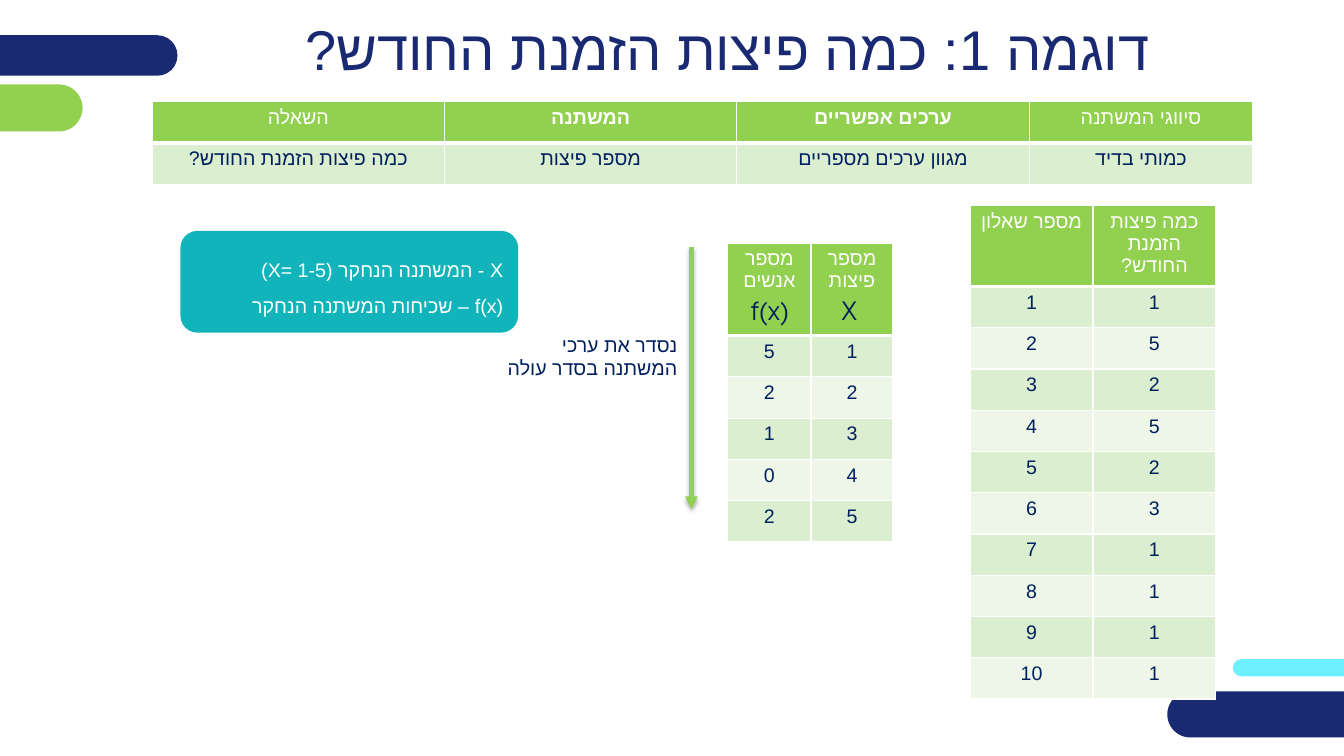
import pptx
import pptx.dml.color
import pptx.enum.shapes
import pptx.enum.text
import pptx.oxml
import pptx.util
from pptx.oxml.ns import nsdecls, qn

Pt = pptx.util.Pt
SHAPES = pptx.enum.shapes.MSO_SHAPE
ANCHOR = pptx.enum.text.MSO_ANCHOR
ALIGN = pptx.enum.text.PP_ALIGN

COLORS = {
    "navy": "192A72", "text": "002060", "green": "92D050", "cyan": "6CF0FF",
    "teal": "12B4BC", "white": "FFFFFF", "band_dark": "DBEECF", "band_light": "EEF6E8",
}
ROW_HEIGHT = 29.5
QUESTION = "כמה פיצות הזמנת החודש?"


def rgb(name):
    return pptx.dml.color.RGBColor.from_string(COLORS[name])


def fill_solid(item, color):
    item.fill.solid()
    item.fill.fore_color.rgb = rgb(color)


def write(tf, lines, color, size=14, font="Arial", align=ALIGN.RIGHT, rtl=True, spacing=None, **font_values):
    """Put each line in its own paragraph, with the font set for Latin and Hebrew."""
    for i, line in enumerate(lines):
        p = tf.paragraphs[0] if i == 0 else tf.add_paragraph()
        p.alignment = align
        if spacing:
            p.line_spacing = spacing
        if rtl:
            p._p.get_or_add_pPr().set("rtl", "1")
        r = p.add_run()
        r.text = line
        for key, value in {"name": font, "size": Pt(size), **font_values}.items():
            setattr(r.font, key, value)
        r.font.color.rgb = rgb(color)
        cs = pptx.oxml.parse_xml(f'<a:cs {nsdecls("a")} typeface="{font}"/>')
        r.font._element.append(cs)


def add_box(s, left, top, width, height, lines, color, wrap=True, anchor=ANCHOR.TOP, **values):
    tf = s.shapes.add_textbox(Pt(left), Pt(top), Pt(width), Pt(height)).text_frame
    for key, value in {"word_wrap": wrap, "vertical_anchor": anchor}.items():
        setattr(tf, key, value)
    write(tf, lines, color, **values)


def add_filled(s, kind, left, top, width, height, color):
    sp = s.shapes.add_shape(kind, Pt(left), Pt(top), Pt(width), Pt(height))
    sp.shadow.inherit = False
    fill_solid(sp, color)
    sp.line.fill.background()
    return sp


def add_pill(s, left, top, width, height, color):
    add_filled(s, SHAPES.ROUNDED_RECTANGLE, left, top, width, height, color).adjustments[0] = 0.5


def set_borders(cell, bottom):
    tc_pr = cell._tc.get_or_add_tcPr()
    widths = {"lnL": 1, "lnR": 1, "lnT": 1, "lnB": bottom}
    for i, (side, width) in enumerate(widths.items()):
        tc_pr.insert(i, pptx.oxml.parse_xml(
            f'<a:{side} {nsdecls("a")} w="{Pt(width)}"><a:solidFill>'
            f'<a:srgbClr val="{COLORS["white"]}"/></a:solidFill></a:{side}>'))


def add_grid(s, left, top, widths, header_height, rows, bold=()):
    """Add a table with a green header and banded rows; bold names the strong header cells."""
    heights = [header_height] + [ROW_HEIGHT] * (len(rows) - 1)
    table = s.shapes.add_table(len(rows), len(widths), Pt(left), Pt(top),
                               Pt(sum(widths)), Pt(sum(heights))).table
    for column, width in zip(table.columns, widths):
        column.width = Pt(width)
    for i, (row, height) in enumerate(zip(rows, heights)):
        table.rows[i].height = Pt(height)
        band = "green" if i == 0 else "band_dark" if i % 2 else "band_light"
        for j, text in enumerate(row):
            cell = table.cell(i, j)
            fill_solid(cell, band)
            set_borders(cell, 1 if i else 3)
            write(cell.text_frame, [str(text)], "text" if i else "white", align=ALIGN.CENTER,
                  **({"bold": True} if i == 0 and text in bold else {}))


def add_order_arrow(s, x, top, bottom):
    line = s.shapes.add_connector(pptx.enum.shapes.MSO_CONNECTOR.STRAIGHT,
                                  Pt(x), Pt(top), Pt(x), Pt(bottom))
    line.line.width = Pt(3)
    line.line.color.rgb = rgb("green")
    ln = line._element.spPr.find(qn("a:ln"))
    ln.append(pptx.oxml.parse_xml(f'<a:tailEnd {nsdecls("a")} type="triangle"/>'))
    line._element.spPr.append(pptx.oxml.parse_xml(
        f'<a:effectLst {nsdecls("a")}><a:outerShdw blurRad="{Pt(3.1)}" dist="{Pt(1.8)}" '
        'dir="5400000" rotWithShape="0"><a:srgbClr val="000000"><a:alpha val="35000"/>'
        '</a:srgbClr></a:outerShdw></a:effectLst>'))


def main():
    prs = pptx.Presentation()
    prs.slide_width, prs.slide_height = Pt(960), Pt(540)
    s = prs.slides.add_slide(prs.slide_layouts[6])

    for pill in [(880.6, 470.9, 125.3, 12.2, "cyan"), (-32.4, 60.3, 91.4, 33.6, "green"),
                 (-38.2, 25.2, 165, 28.9, "navy"), (833.8, 493.8, 172.8, 33, "navy")]:
        add_pill(s, *pill)

    add_box(s, 126.7, 9.4, 785.5, 50.4, [f"דוגמה 1: {QUESTION}"], "navy",
            size=40, align=ALIGN.CENTER, anchor=ANCHOR.MIDDLE)

    add_grid(s, 108.7, 72.7, [208.8, 208.8, 208.8, 159.8], ROW_HEIGHT,
             [["השאלה", "המשתנה", "ערכים אפשריים", "סיווגי המשתנה"],
              [QUESTION, "מספר פיצות", "מגוון ערכים מספריים", "כמותי בדיד"]],
             bold=("המשתנה", "ערכים אפשריים"))
    answers = [1, 5, 2, 5, 2, 3, 1, 1, 1, 1]
    add_grid(s, 692.9, 146.9, [87.8, 87.8], 49,
             [["מספר שאלון", QUESTION], *enumerate(answers, 1)])
    add_grid(s, 519.8, 173.5, [59.5, 58.5], 66.2,
             [["מספר אנשים", "מספר פיצות"], (5, 1), (2, 2), (1, 3), (0, 4), (2, 5)])

    add_order_arrow(s, 493.9, 176.4, 363.6)
    add_box(s, 354.2, 234, 136.8, 41, ["נסדר את ערכי המשתנה בסדר עולה"], "text")

    legend = add_filled(s, SHAPES.FLOWCHART_ALTERNATE_PROCESS, 128.9, 164.9, 241.2, 72.7, "teal")
    write(legend.text_frame, ["X - המשתנה הנחקר (X= 1-5)", "(f(x – שכיחות המשתנה הנחקר"],
          "white", spacing=1.5)

    symbol = {"size": 18, "font": "TeX Gyre Adventor"}
    add_box(s, 600.5, 207.4, 18.7, 28.8, ["X"], "text", wrap=False, **symbol)
    add_box(s, 529.2, 207.4, 51.8, 28.8, ["f(x)"], "text", align=ALIGN.LEFT, rtl=False, **symbol)
    prs.save("out.pptx")


if __name__ == "__main__":
    main()
